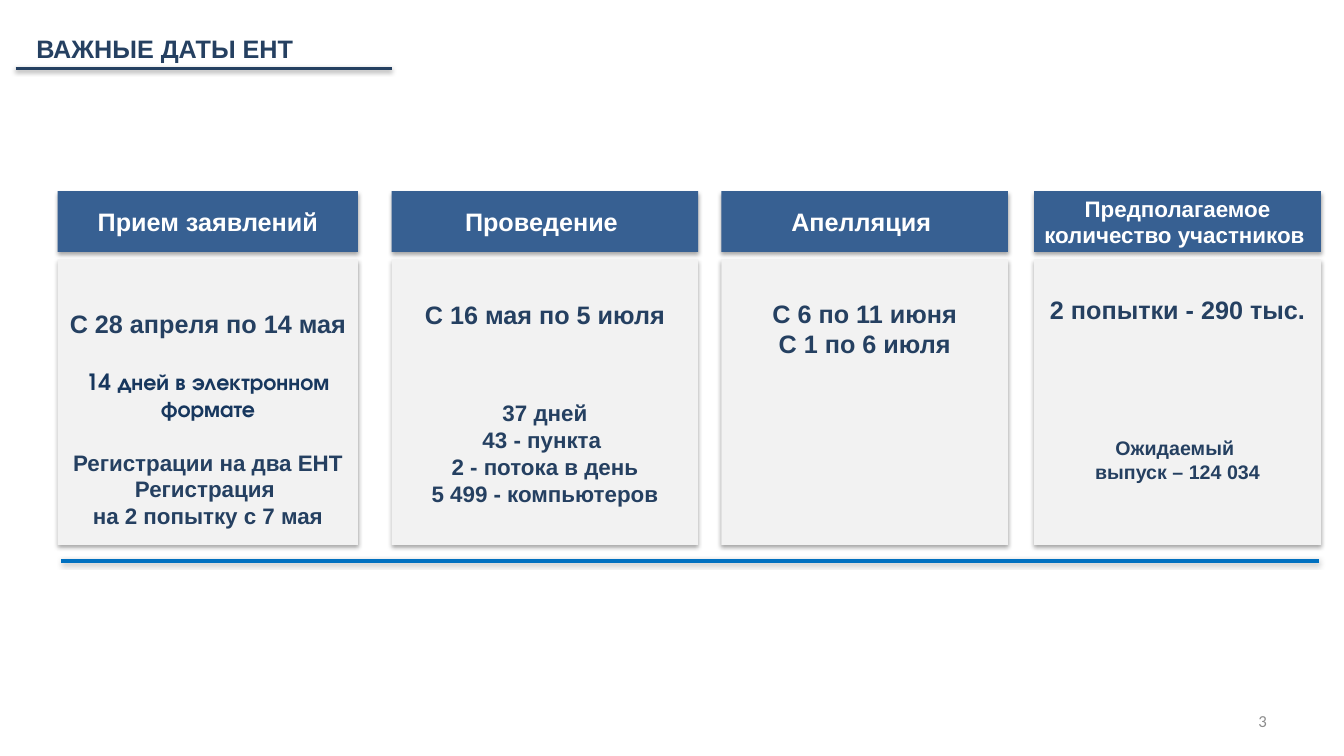
from lxml import etree
from pptx import Presentation
from pptx.dml.color import RGBColor
from pptx.enum.shapes import MSO_CONNECTOR, MSO_SHAPE
from pptx.enum.text import MSO_ANCHOR, MSO_AUTO_SIZE, PP_ALIGN
from pptx.oxml import parse_xml
from pptx.oxml.ns import nsdecls, qn
from pptx.util import Emu, Pt

RECTANGLE = MSO_SHAPE.RECTANGLE
STRAIGHT = MSO_CONNECTOR.STRAIGHT
TOP, MIDDLE = MSO_ANCHOR.TOP, MSO_ANCHOR.MIDDLE
LEFT, CENTER, RIGHT = PP_ALIGN.LEFT, PP_ALIGN.CENTER, PP_ALIGN.RIGHT
NO_AUTOFIT = MSO_AUTO_SIZE.NONE

COLORS = {
    "header": "376092",
    "card": "F2F2F2",
    "navy": "254061",
    "format": "17375E",
    "timeline": "0070C0",
    "white": "FFFFFF",
    "number": "8C8C8C",
    "shadow": "000000",
}
SANS, ROUND, PLAIN = "Arial", "TeX Gyre Adventor", "Calibri"
PX = 9525
HEADER_TOP, HEADER_HEIGHT = 182, 58
CARD_TOP, CARD_HEIGHT = 247, 272


def px(length):
    return Emu(length * PX)


def color(name):
    return RGBColor.from_string(COLORS[name])


class DatesSlide:
    def __init__(self, presentation):
        self.slide = presentation.slides.add_slide(presentation.slide_layouts[5])
        self.shapes = self.slide.shapes

    def style(self, paragraph, size, ink, font=SANS, bold=True, align=CENTER, before=0):
        paragraph.alignment = align
        paragraph.space_before = Pt(before)
        for run in paragraph.runs:
            run.font.size = Pt(size)
            run.font.name = font
            run.font.bold = bold
            run.font.color.rgb = color(ink)

    def cast_shadow(self, element, opacity=35, distance=23000):
        properties = element._element.spPr
        effects = properties.find(qn("a:effectLst"))
        if effects is None:
            effects = etree.SubElement(properties, qn("a:effectLst"))
        effects.append(parse_xml(
            f'<a:outerShdw {nsdecls("a")} blurRad="40000" dist="{distance}" '
            f'dir="5400000" rotWithShape="0"><a:srgbClr val="{COLORS["shadow"]}">'
            f'<a:alpha val="{opacity * 1000}"/></a:srgbClr></a:outerShdw>'))

    def title(self, text, left, top, width, height):
        heading = self.shapes.title
        heading.left, heading.top = px(left), px(top)
        heading.width, heading.height = px(width), px(height)
        frame = heading.text_frame
        frame.text = text
        frame.auto_size = NO_AUTOFIT
        frame.word_wrap = True
        frame.vertical_anchor = MIDDLE
        self.style(frame.paragraphs[0], 18, "navy", align=LEFT)

    def panel(self, left, top, width, height, fill):
        panel = self.shapes.add_shape(RECTANGLE, px(left), px(top), px(width), px(height))
        panel.fill.solid()
        panel.fill.fore_color.rgb = color(fill)
        panel.line.fill.background()
        panel.shadow.inherit = False
        self.cast_shadow(panel)
        panel.text_frame.word_wrap = True
        return panel.text_frame

    def header(self, text, left, width, size):
        frame = self.panel(left, HEADER_TOP, width, HEADER_HEIGHT, "header")
        frame.vertical_anchor = MIDDLE
        frame.text = text
        self.style(frame.paragraphs[0], size, "white")

    def card(self, lines, left, width, inset):
        frame = self.panel(left, CARD_TOP, width, CARD_HEIGHT, "card")
        frame.vertical_anchor = TOP
        frame.margin_top = px(inset)
        frame.text = "\n".join(text for text, *_ in lines)
        for paragraph, (_, size, before, font, ink) in zip(frame.paragraphs, lines):
            self.style(paragraph, size, ink, font, before=before)

    def rule(self, left, right, y, ink, weight, **shadow):
        rule = self.shapes.add_connector(STRAIGHT, px(left), px(y), px(right), px(y))
        rule.line.color.rgb = color(ink)
        rule.line.width = Pt(weight)
        self.cast_shadow(rule, **shadow)

    def page_number(self, text, left, top, width, height):
        box = self.shapes.add_textbox(px(left), px(top), px(width), px(height))
        frame = box.text_frame
        frame.word_wrap = True
        frame.vertical_anchor = MIDDLE
        frame.text = text
        self.style(frame.paragraphs[0], 12, "number", PLAIN, bold=False, align=RIGHT)


def line(text, size=16, before=0, font=SANS, ink="navy"):
    return text, size, before, font, ink


STAGES = [
    ("Прием заявлений", 18, 55, 286, 47, [
        line("С 28 апреля по 14 мая", 18),
        line("14 дней в электронном формате", before=21, font=ROUND, ink="format"),
        line("Регистрации на два ЕНТ", before=19),
        line("Регистрация "),
        line("на 2 попытку с 7 мая"),
    ]),
    ("Проведение ", 18, 373, 292, 38, [
        line("С 16 мая по 5 июля", 18),
        line("37 дней", before=50),
        line("43 - пункта "),
        line("2 - потока в день"),
        line("5 499 - компьютеров"),
    ]),
    ("Апелляция ", 18, 687, 273, 37, [
        line("С 6 по 11 июня", 18),
        line("С 1 по 6 июля", 18),
    ]),
    ("Предполагаемое количество участников ", 16, 985, 273, 33, [
        line("2 попытки - 290 тыс.", 18),
        line("Ожидаемый ", 14, before=80),
        line("выпуск – 124 034", 14),
    ]),
]


def main():
    presentation = Presentation()
    presentation.slide_width, presentation.slide_height = px(1280), px(720)
    dates = DatesSlide(presentation)
    dates.title("ВАЖНЫЕ ДАТЫ ЕНТ", 25, 27, 280, 38)
    for name, size, left, width, inset, lines in STAGES:
        dates.header(name, left, width, size)
        dates.card(lines, left, width, inset)
    dates.rule(58, 1256, 534, "timeline", 3)
    dates.rule(15, 373, 65, "navy", 2, opacity=38, distance=20000)
    dates.page_number("3", 917, 667, 299, 38)
    presentation.save("out.pptx")


if __name__ == "__main__":
    main()
